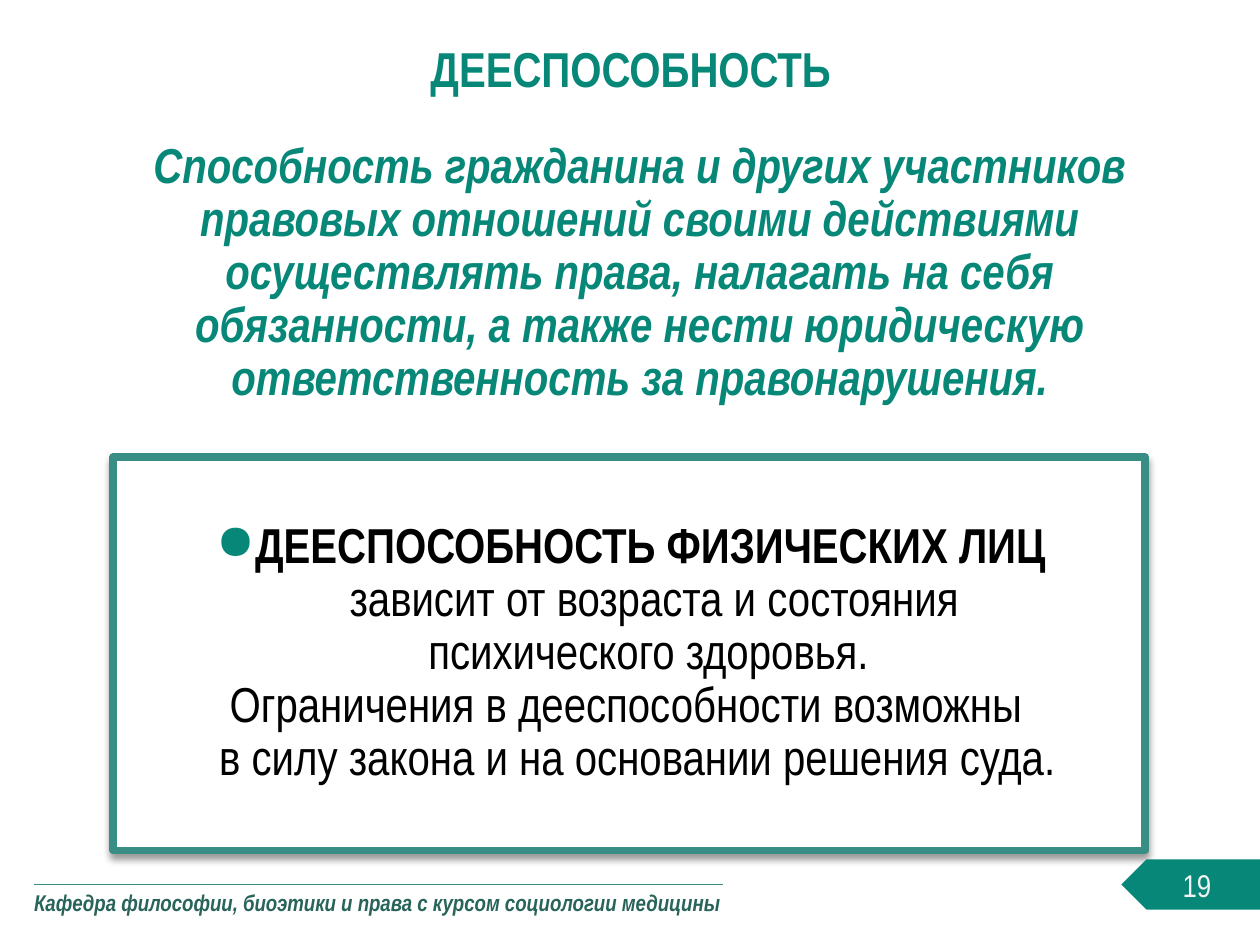
from lxml import etree
from pptx import Presentation
from pptx.dml.color import RGBColor
from pptx.enum.shapes import MSO_SHAPE
from pptx.enum.text import MSO_ANCHOR, PP_ALIGN
from pptx.oxml.ns import qn
from pptx.util import Inches, Pt

RECT, PENTAGON = MSO_SHAPE.RECTANGLE, MSO_SHAPE.PENTAGON
CENTER, LEFT = PP_ALIGN.CENTER, PP_ALIGN.LEFT
MIDDLE, TOP = MSO_ANCHOR.MIDDLE, MSO_ANCHOR.TOP
FONT = "Arial Narrow"
COLORS = {"teal": "078777", "frame": "388E84", "footer": "28645A",
          "white": "FFFFFF", "number": "F2F2F2", "black": "000000"}
COLS, ROWS = 100, 75
PANEL_X, PANEL_W = 9, 81.9


def rgb(name):
    return RGBColor.from_string(COLORS[name])


def add(parent, tag, **attrs):
    return etree.SubElement(parent, qn(tag), {k: str(v) for k, v in attrs.items()})


class SlideBuilder:
    def __init__(self, prs):
        self.slide = prs.slides.add_slide(prs.slide_layouts[6])
        self.col = prs.slide_width / COLS
        self.row = prs.slide_height / ROWS

    def box(self, x, y, w, h):
        return [round(v) for v in (x * self.col, y * self.row, w * self.col, h * self.row)]

    def style(self, p, size, color, bold=None, italic=None, align=CENTER, spacing=None):
        p.alignment = align
        if spacing:
            p.line_spacing = spacing
        f = p.font
        f.name, f.size, f.bold, f.italic = FONT, Pt(size), bold, italic
        f.color.rgb = rgb(color)

    def frame(self, sp, insets=(0, 0, 0, 0), anchor=MIDDLE):
        tf = sp.text_frame
        tf.word_wrap = True
        tf.vertical_anchor = anchor
        tf.margin_left, tf.margin_top, tf.margin_right, tf.margin_bottom = map(Inches, insets)
        return tf

    def text(self, box, text, **style):
        tf = self.frame(self.slide.shapes.add_textbox(*self.box(*box)))
        tf.text = text
        self.style(tf.paragraphs[0], **style)

    def shape(self, kind, box, fill, line=None, width=4.5):
        sp = self.slide.shapes.add_shape(kind, *self.box(*box))
        sp.shadow.inherit = False
        sp.fill.solid()
        sp.fill.fore_color.rgb = rgb(fill)
        if line:
            sp.line.color.rgb = rgb(line)
            sp.line.width = Pt(width)
            add(sp.line._get_or_add_ln(), "a:round")
        else:
            sp.line.fill.background()
        return sp

    def drop_shadow(self, sp, blur, dist, alpha):
        effects = sp._element.spPr.find(qn("a:effectLst"))
        shadow = add(effects, "a:outerShdw", blurRad=Pt(blur), dist=Pt(dist),
                     dir=90 * 60000, rotWithShape=0)
        color = add(shadow, "a:srgbClr", val=COLORS["black"])
        add(color, "a:alpha", val=alpha * 1000)

    def fade(self, sp, alpha):
        color = sp._element.spPr.find(qn("a:solidFill")).find(qn("a:srgbClr"))
        add(color, "a:alpha", val=alpha * 1000)

    def indent(self, p, left, hanging=0, right=0):
        pPr = p._p.get_or_add_pPr()
        for key, value in (("marL", left), ("indent", -hanging), ("marR", right)):
            pPr.set(key, str(Inches(value)))

    def bullet(self, p, char, color):
        pPr = p._p.get_or_add_pPr()
        add(add(pPr, "a:buClr"), "a:srgbClr", val=COLORS[color])
        add(pPr, "a:buChar", char=char)

    def footer(self, box, text, **style):
        table = self.slide.shapes.add_table(1, 1, *self.box(*box)).table
        table.first_row = table.horz_banding = False
        cell = table.cell(0, 0)
        cell.margin_left = cell.margin_right = cell.margin_bottom = 0
        cell.margin_top = Inches(0.08)
        cell.text = text
        self.style(cell.text_frame.paragraphs[0], **style)
        tcPr = cell._tc.get_or_add_tcPr()
        for side in ("a:lnL", "a:lnR", "a:lnT", "a:lnB"):
            if side == "a:lnT":
                fill = add(add(tcPr, side, w=Pt(1)), "a:solidFill")
                add(fill, "a:srgbClr", val=COLORS["frame"])
            else:
                add(add(tcPr, side, w=0), "a:noFill")
        cell.fill.background()


def main():
    prs = Presentation()
    prs.slide_width, prs.slide_height = Inches(10), Inches(7.5)
    s = SlideBuilder(prs)

    s.footer((2.7, 70.2, 54.7, 4.3),
             "Кафедра философии, биоэтики и права с курсом социологии медицины",
             size=13, color="footer", bold=True, italic=True, align=LEFT)

    panel = s.shape(RECT, (PANEL_X, 36.3, PANEL_W, 31.2), "white", "frame")
    s.drop_shadow(panel, blur=4, dist=3, alpha=40)
    tf = s.frame(panel, (0.08, 0.04, 0.08, 0.04))
    p = tf.paragraphs[0]
    s.indent(p, 0.39, hanging=0.28)
    s.bullet(p, "●", "teal")
    lines = ("ДЕЕСПОСОБНОСТЬ ФИЗИЧЕСКИХ ЛИЦ ", "зависит от возраста и состояния",
             "психического здоровья. ")
    for i, line in enumerate(lines):
        if i:
            p.add_line_break()
        r = p.add_run()
        r.text = line
        r.font.bold = i == 0
    s.style(p, 28, "black", spacing=0.9)
    for line, right in (("Ограничения в дееспособности возможны", 0.18),
                        ("в силу закона и на основании решения суда.", 0)):
        p = tf.add_paragraph()
        p.text = line
        s.indent(p, 0.12, right=right)
        s.style(p, 28, "black", spacing=0.9)

    s.text((26, 3.1, 48.1, 5.1), "ДЕЕСПОСОБНОСТЬ",
           size=28, color="teal", bold=True, spacing=0.9)

    tag = s.shape(PENTAGON, (89, 68.2, 11, 4), "teal")
    tag._element.spPr.find(qn("a:xfrm")).set("flipH", "1")
    tf = s.frame(tag, (0.1, 0.05, 0.1, 0.05))
    tf.text = "19"
    s.style(tf.paragraphs[0], 18, "number")

    definition = s.shape(RECT, (PANEL_X, 10.7, PANEL_W, 22), "white")
    s.fade(definition, 27)
    tf = s.frame(definition, (0.2, 0.04, 0.04, 0.04))
    tf.text = ("Способность гражданина и других участников правовых отношений "
               "своими действиями осуществлять права, налагать на себя обязанности, "
               "а также нести юридическую ответственность за правонарушения.")
    s.style(tf.paragraphs[0], 28, "teal", bold=True, italic=True, spacing=0.9)

    prs.save("out.pptx")


if __name__ == "__main__":
    main()
